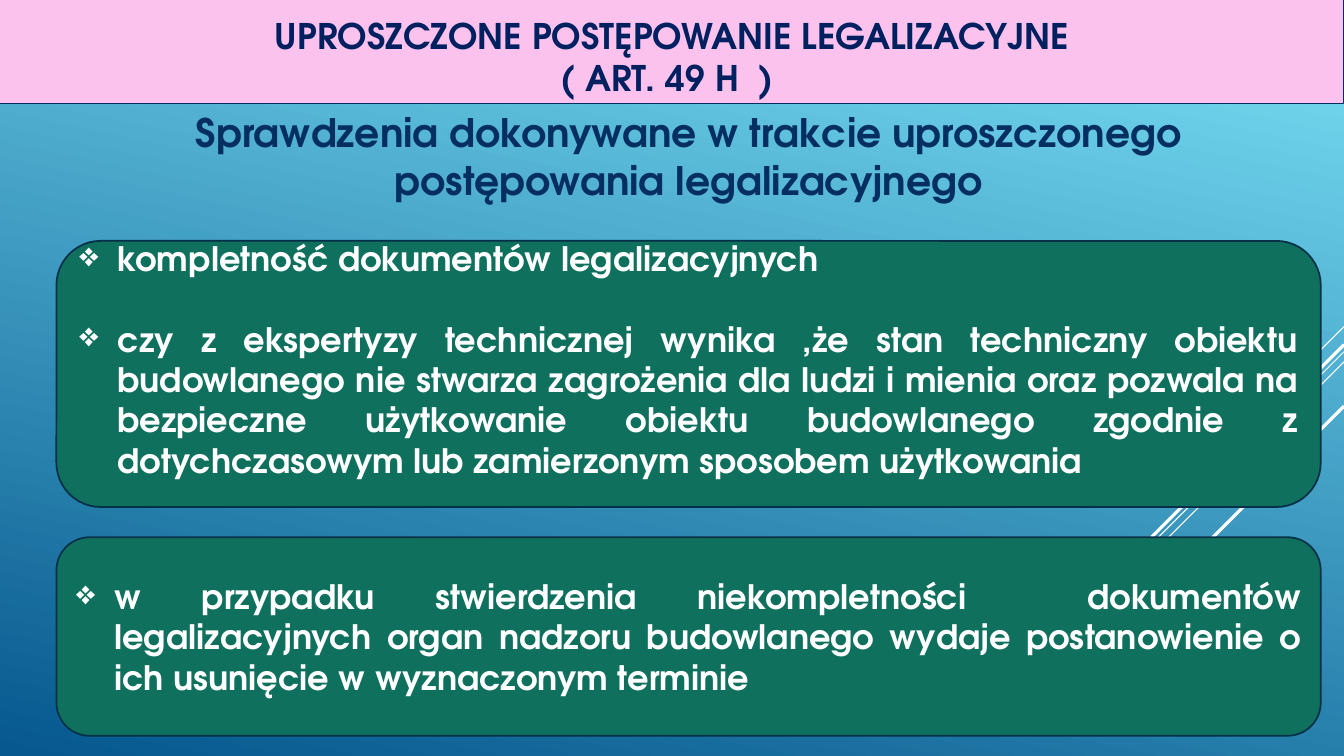
from dataclasses import dataclass

from lxml import etree
from pptx import Presentation
from pptx.dml.color import RGBColor
from pptx.enum.shapes import MSO_CONNECTOR, MSO_SHAPE
from pptx.enum.text import MSO_ANCHOR, PP_ALIGN
from pptx.oxml.ns import qn
from pptx.util import Inches, Pt

RECT = MSO_SHAPE.RECTANGLE
ROUNDED = MSO_SHAPE.ROUNDED_RECTANGLE
STRAIGHT = MSO_CONNECTOR.STRAIGHT
TOP, MIDDLE, BOTTOM = MSO_ANCHOR.TOP, MSO_ANCHOR.MIDDLE, MSO_ANCHOR.BOTTOM
CENTER, JUSTIFY = PP_ALIGN.CENTER, PP_ALIGN.JUSTIFY


@dataclass(frozen=True)
class Theme:
    font: str = "TeX Gyre Adventor"
    sky: str = "6ED2EB"
    sea: str = "06588E"
    white: str = "FFFFFF"
    pink: str = "FAC2ED"
    title: str = "002060"
    navy: str = "052F61"
    green: str = "0F705D"
    green_edge: str = "043148"
    title_size: float = 25.2
    subtitle_size: float = 28
    body_size: float = 24


THEME = Theme()
SLIDE_W, SLIDE_H = 13.33, 7.5
PANEL_X, PANEL_W = 0.56, 12.54
BULLET_INDENT = 0.38

# Diagonal streaks at 45 degrees: start height, run to the left, width
STREAKS = [(3.24, 1.0, 0.75), (3.49, 3.26, 0.75), (3.59, 2.07, 0.75),
           (3.42, 1.91, 2.25), (4.03, 1.39, 2.25)]

TITLE = "UPROSZCZONE POSTĘPOWANIE LEGALIZACYJNE\v( ART. 49 H  ) "
SUBTITLE = ("Sprawdzenia dokonywane w trakcie uproszczonego "
            "postępowania legalizacyjnego")
CHECKS = [
    "kompletność dokumentów legalizacyjnych",
    "czy z ekspertyzy technicznej wynika ,że stan techniczny obiektu "
    "budowlanego nie stwarza zagrożenia dla ludzi i mienia oraz pozwala na "
    "bezpieczne użytkowanie obiektu budowlanego zgodnie z dotychczasowym "
    "lub zamierzonym sposobem użytkowania",
]
OUTCOME = [
    "w przypadku stwierdzenia niekompletności  dokumentów legalizacyjnych "
    "organ nadzoru budowlanego wydaje postanowienie o ich usunięcie "
    "w wyznaczonym terminie",
]


def rgb(value):
    return RGBColor.from_string(value)


def set_background(s):
    fill = s.background.fill
    fill.gradient()
    fill.gradient_angle = 258
    stops = ((0.1, THEME.sky), (1, THEME.sea))
    for stop, (position, color) in zip(fill.gradient_stops, stops):
        stop.position = position
        stop.color.rgb = rgb(color)


def add_streak(s, y, run, width):
    line = s.shapes.add_connector(STRAIGHT, Inches(SLIDE_W), Inches(y),
                                  Inches(SLIDE_W - run), Inches(y + run))
    line.line.color.rgb = rgb(THEME.white)
    line.line.width = Pt(width)
    etree.SubElement(line._element.spPr, qn("a:effectLst"))


def add_box(s, kind, x, y, w, h, fill, edge, edge_width):
    sp = s.shapes.add_shape(kind, Inches(x), Inches(y), Inches(w), Inches(h))
    sp.shadow.inherit = False
    sp.fill.solid()
    sp.fill.fore_color.rgb = rgb(fill)
    sp.line.color.rgb = rgb(edge)
    sp.line.width = Pt(edge_width)
    return sp


def write(sp, texts, size, color, align, anchor):
    tf = sp.text_frame
    tf.word_wrap = True
    tf.vertical_anchor = anchor
    for i, text in enumerate(texts):
        p = tf.add_paragraph() if i else tf.paragraphs[0]
        p.text = text
        p.alignment = align
        p.font.name = THEME.font
        p.font.size = Pt(size)
        p.font.bold = True
        p.font.color.rgb = rgb(color)
    return tf


def add_bullet(p):
    pPr = p._p.get_or_add_pPr()
    pPr.set("marL", str(Inches(BULLET_INDENT)))
    pPr.set("indent", str(-Inches(BULLET_INDENT)))
    bullet = etree.Element(qn("a:buChar"), char="❖")
    pPr.insert_element_before(bullet, "a:tabLst", "a:defRPr", "a:extLst")


def add_panel(s, y, h, items):
    sp = add_box(s, ROUNDED, PANEL_X, y, PANEL_W, h,
                 THEME.green, THEME.green_edge, 1.25)
    tf = write(sp, items, THEME.body_size, THEME.white, JUSTIFY, MIDDLE)
    for i, p in enumerate(tf.paragraphs):
        if i:
            p.space_before = Pt(1.2 * THEME.body_size)
        add_bullet(p)
    return tf


def main():
    prs = Presentation()
    prs.slide_width, prs.slide_height = Inches(SLIDE_W), Inches(SLIDE_H)
    s = prs.slides.add_slide(prs.slide_layouts[6])

    # Backdrop
    set_background(s)
    for streak in STREAKS:
        add_streak(s, *streak)

    # Title band
    band = add_box(s, RECT, 0, 0, SLIDE_W, 1.03, THEME.pink, THEME.navy, 0.75)
    write(band, [TITLE], THEME.title_size, THEME.title, CENTER, BOTTOM)

    # Subtitle
    subtitle = s.shapes.add_textbox(Inches(PANEL_X), Inches(1.03),
                                    Inches(PANEL_W), Inches(2.79))
    write(subtitle, [SUBTITLE], THEME.subtitle_size, THEME.navy, CENTER, TOP)

    # Green panels; the first one holds its text high
    checks = add_panel(s, 2.39, 2.64, CHECKS)
    checks.margin_top, checks.margin_bottom = Inches(0), Inches(0.3)
    add_panel(s, 5.33, 1.97, OUTCOME)

    prs.save("out.pptx")


if __name__ == "__main__":
    main()
